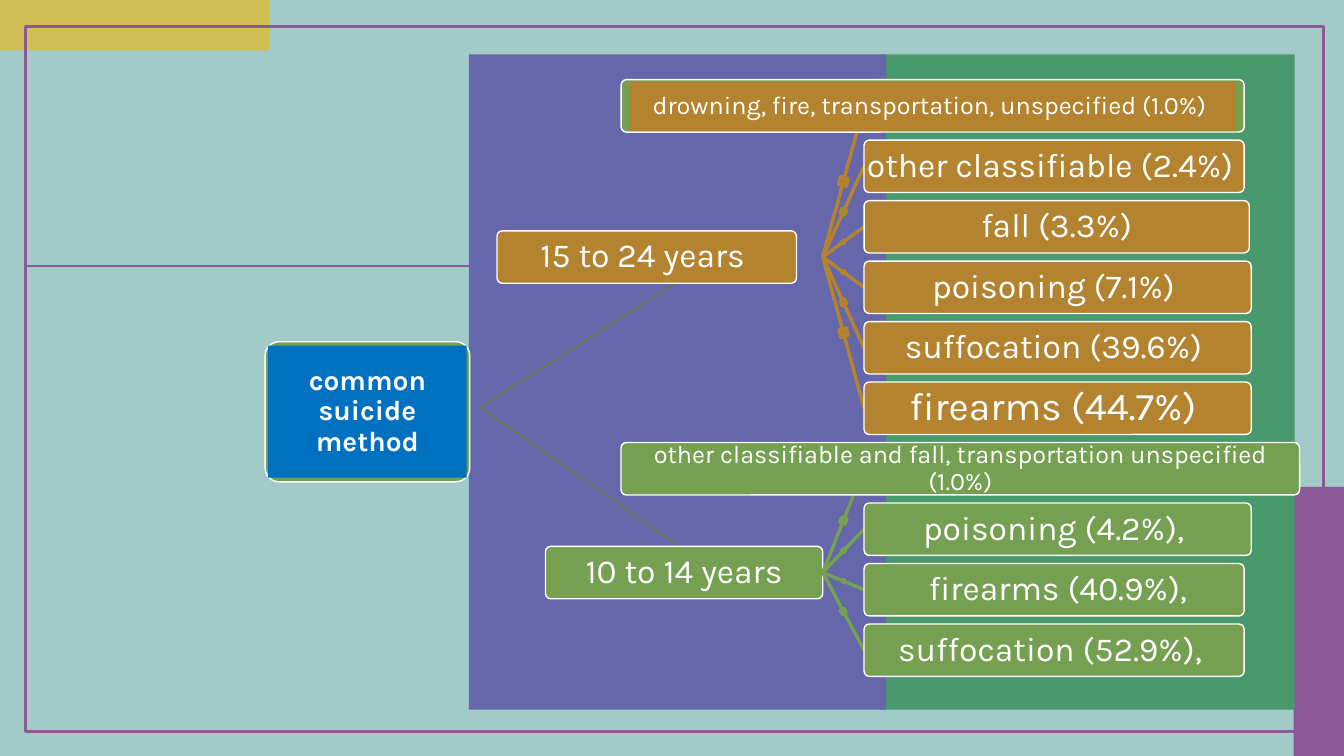
import math

from lxml import etree
from pptx import Presentation
from pptx.dml.color import RGBColor
from pptx.enum.shapes import MSO_CONNECTOR, MSO_SHAPE
from pptx.enum.text import MSO_ANCHOR, PP_ALIGN
from pptx.oxml.ns import qn
from pptx.util import Inches, Pt

RECT = MSO_SHAPE.RECTANGLE
ROUND = MSO_SHAPE.ROUNDED_RECTANGLE
LINE = MSO_CONNECTOR.STRAIGHT
MIDDLE = MSO_ANCHOR.MIDDLE
CENTER = PP_ALIGN.CENTER

FONT = "Karla"
COLORS = {
    "back": "A1CAC9", "gold": "CFBF54", "plum": "8A5897", "frame": "8C5896",
    "teal": "48996B", "violet": "6667AB", "green": "759F51", "ochre": "B3832F",
    "blue": "0070C0", "stem": "5E7F41", "white": "FFFFFF",
}
ROW_TOP, ROW_STEP, ROW_HIGH = 0.79, 0.6, 0.52
ROOT_END, STEM_END = (4.76, 4.04), 7.11
HUB, LEAF = 8.16, 8.57

# Each leaf: text, left, width, size
AGES = [
    {
        "text": "15 to 24 years ", "left": 4.93, "width": 2.97, "mid": 2.55,
        "color": "ochre", "row": 0,
        "leaves": [
            ("drowning, fire, transportation, unspecified (1.0%) ", 6.16, 6.18, 18),
            ("other classifiable (2.4%) ", LEAF, 3.77, 24),
            ("fall (3.3%)", LEAF, 3.82, 24),
            ("poisoning (7.1%) ", LEAF, 3.84, 24),
            ("suffocation (39.6%) ", LEAF, 3.84, 24),
            ("firearms (44.7%) ", LEAF, 3.84, 28),
        ],
    },
    {
        "text": "10 to 14 years", "left": 5.41, "width": 2.75, "mid": 5.68,
        "color": "green", "row": 6,
        "leaves": [
            ("other classifiable and fall, transportation unspecified (1.0%)",
             6.16, 6.73, 18),
            ("poisoning (4.2%), ", LEAF, 3.84, 24),
            (" firearms (40.9%),", LEAF, 3.77, 24),
            ("suffocation (52.9%), ", LEAF, 3.77, 24),
        ],
    },
]


def rgb(name):
    return RGBColor.from_string(COLORS[name])


def add_box(slide, kind, left, top, width, height, fill=None, line=None, weight=1):
    box = slide.shapes.add_shape(
        kind, Inches(left), Inches(top), Inches(width), Inches(height))
    box.shadow.inherit = False
    if kind == ROUND:
        box.adjustments[0] = 0.1
    if fill:
        box.fill.solid()
        box.fill.fore_color.rgb = rgb(fill)
    else:
        box.fill.background()
    if line:
        box.line.color.rgb = rgb(line)
        box.line.width = Pt(weight)
    else:
        box.line.fill.background()
    return box


def add_line(slide, start, end, color, weight):
    line = slide.shapes.add_connector(
        LINE, *(Inches(value) for value in (*start, *end)))
    line.line.color.rgb = rgb(color)
    line.line.width = Pt(weight)
    etree.SubElement(line.element.spPr, qn("a:effectLst"))


def add_spoke(slide, start, end, color):
    """Draw a line with a small square, a twentieth of its length, midway."""
    add_line(slide, start, end, color, 2.5)
    wide, high = end[0] - start[0], end[1] - start[1]
    side = math.hypot(wide, high) / 20
    knot = add_box(slide, RECT, start[0] + (wide - side) / 2,
                   start[1] + (high - side) / 2, side, side,
                   line=color, weight=2.5)
    knot.rotation = math.degrees(math.atan2(high, wide))


def set_text(box, text, size, bold=False):
    frame = box.text_frame
    frame.text = text
    frame.word_wrap = True
    frame.vertical_anchor = MIDDLE
    frame.margin_left = frame.margin_right = Inches(0.01)
    frame.margin_top = frame.margin_bottom = Inches(0.01)
    para = frame.paragraphs[0]
    para.alignment = CENTER
    para.line_spacing = 0.9
    font = para.runs[0].font
    font.name = FONT
    font.size = Pt(size)
    font.bold = bold
    font.color.rgb = rgb("white")


def add_decor(slide):
    add_box(slide, RECT, 0, 0, 2.67, 0.5, "gold")
    add_box(slide, RECT, 12.83, 4.83, 0.5, 2.67, "plum")
    add_box(slide, RECT, 8.73, 0.54, 4.11, 6.5, "teal")
    add_box(slide, RECT, 4.65, 0.54, 4.14, 6.5, "violet")
    add_box(slide, RECT, 0.25, 0.26, 12.88, 7, line="frame", weight=2)
    add_line(slide, (0.25, 2.64), (4.65, 2.64), "frame", 2)


def add_root(slide):
    add_box(slide, ROUND, 2.63, 3.39, 2.03, 1.39, "green", "white")
    label = add_box(slide, RECT, 2.66, 3.43, 1.97, 1.31, "blue")
    set_text(label, "common suicide method", 20, bold=True)


def add_age(slide, age):
    """Draw one age group with its stem, spokes and methods."""
    color, mid = age["color"], age["mid"]
    add_line(slide, ROOT_END, (STEM_END, mid), "stem", 1)
    node = add_box(slide, ROUND, age["left"], mid - ROW_HIGH / 2,
                   age["width"], ROW_HIGH, color, "white")
    set_text(node, age["text"], 24)
    for row, (text, left, width, size) in enumerate(age["leaves"], age["row"]):
        top = ROW_TOP + row * ROW_STEP
        add_spoke(slide, (HUB, mid), (LEAF, top + ROW_HIGH / 2), color)
        first = row == 0
        leaf = add_box(slide, ROUND, left, top, width, ROW_HIGH,
                       "green" if first else color, "white")
        if first:
            leaf = add_box(slide, RECT, left + 0.09, top + 0.02,
                           width - 0.18, 0.49, color)
        set_text(leaf, text, size)


def main():
    deck = Presentation()
    deck.slide_width = Inches(13.33)
    deck.slide_height = Inches(7.5)
    slide = deck.slides.add_slide(deck.slide_layouts[6])
    slide.background.fill.solid()
    slide.background.fill.fore_color.rgb = rgb("back")
    add_decor(slide)
    add_root(slide)
    for age in AGES:
        add_age(slide, age)
    deck.save("out.pptx")


if __name__ == "__main__":
    main()
